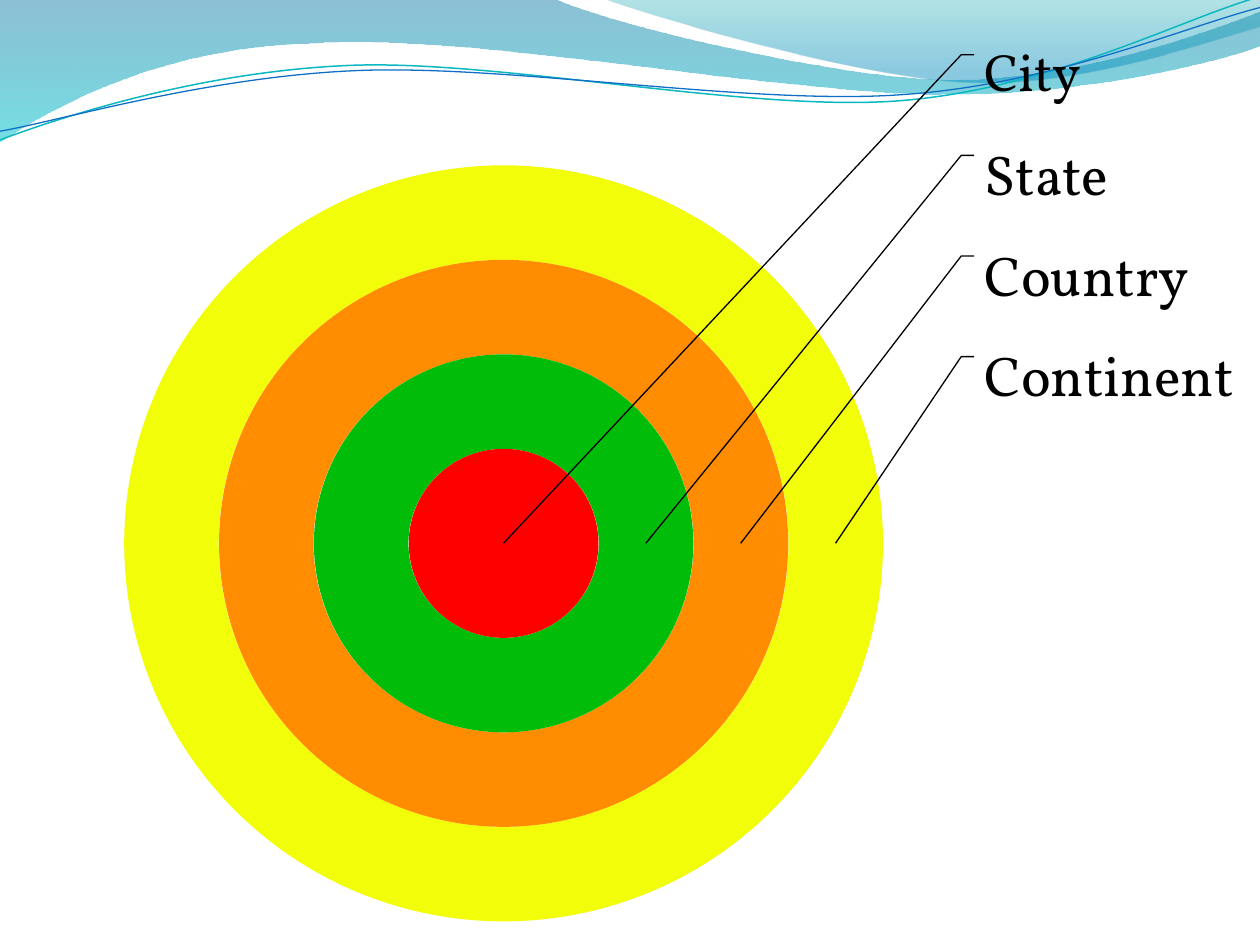
from dataclasses import dataclass
from itertools import chain

from lxml.etree import SubElement
from pptx import Presentation
from pptx.dml.color import RGBColor as RGB
from pptx.enum.shapes import MSO_SHAPE as SHAPE
from pptx.enum.text import MSO_ANCHOR as ANCHOR, PP_ALIGN as ALIGN
from pptx.oxml.ns import qn
from pptx.util import Pt


@dataclass(frozen=True)
class Theme:
    font: str = "Vollkorn"
    city_size: int = 30
    label_size: int = 32
    ink: str = "000000"
    city: str = "FF0000"
    state: str = "01BD0A"
    country: str = "FF8C01"
    continent: str = "F1FD09"
    teal_line: str = "0AB8BF"
    blue_line: str = "0F6FC6"
    # Gradient stops: position, colour, opacity in percent
    wide_wave: tuple = ((0, "0074A1", 45), (1, "00C6CF", 55))
    corner_wave: tuple = ((0, "00A1A9", 30), (0.8, "008BBF", 45))


THEME = Theme()
CENTER_X, CENTER_Y = 287.8, 310.5
RING_W, RING_H = 54.2, 54
LABEL_X, LABEL_Y, LABEL_W, LABEL_H = 562.6, 22.3, 86.4, 57.5
WAVE_LINE_TILT = 357.3

# An outline is a start point, then segments of one point (line) or three (curve).
WIDE_WAVE = [
    [(0, 0)], [(316.8, -0.7)],
    [(342.7, 12.2), (478.1, 45.4), (545.8, 45.4)],
    [(614.2, 45.4), (689.8, 18.7), (720, 6.5)],
    [(720.7, 25.9)],
    [(707.8, 31.7), (626.4, 54.7), (537.1, 54)],
    [(447.8, 54), (275, 20.2), (185, 24.5)],
    [(92.9, 25.9), (33.1, 59.8), (-0.7, 81.4)],
]
CORNER_WAVE = [
    [(344.9, -0.7)],
    [(366.5, 7.9), (491, 44.6), (553.7, 46.8)],
    [(616.3, 49.7), (691.9, 23), (720, 15.1)],
    [(720, 0)],
]
TEAL_LINE = [
    [(-1.4, 63)],
    [(33.8, 51.7), (114.1, 29.4), (199.8, 29.9)],
    [(284.8, 30.3), (425.8, 67.3), (512.4, 64.9)],
    [(599, 62.4), (676.5, 25.7), (720.2, 15.5)],
]
BLUE_LINE = [
    [(-1.1, 58)],
    [(32.9, 53.8), (118.3, 32.5), (204.1, 33)],
    [(290.6, 33.4), (428.9, 63.8), (515.5, 61.4)],
    [(601.3, 59.6), (678.5, 30.1), (721.4, 21.3)],
]


def add_freeform(slide, outline, close):
    """Draw the outline by its points, then join each three into a curve."""
    first, *rest = [(Pt(x), Pt(y)) for x, y in chain(*outline)]
    builder = slide.shapes.build_freeform(*first)
    builder.add_line_segments(rest, close=close)
    sp = builder.convert_to_shape()
    sp.shadow.inherit = False
    lines = iter(list(sp._element.iter(qn("a:lnTo"))))
    for segment in outline[1:]:
        parts = [next(lines) for _ in segment]
        if len(parts) == 3:
            curve = parts[0].makeelement(qn("a:cubicBezTo"))
            parts[0].addprevious(curve)
            for part in parts:
                curve.append(part[0])
                part.getparent().remove(part)
    return sp


def add_wave(slide, outline, stops):
    sp = add_freeform(slide, outline, close=True)
    sp.line.fill.background()
    sp.fill.gradient()
    sp.fill.gradient_angle = 270
    for stop, (position, color, _) in zip(sp.fill.gradient_stops, stops):
        stop.position = position
        stop.color.rgb = RGB.from_string(color)
    for clr, (_, _, opacity) in zip(sp._element.iter(qn("a:srgbClr")), stops):
        SubElement(clr, qn("a:alpha"), val=str(opacity * 1000))


def set_line(sp, color, width):
    sp.fill.background()
    sp.line.color.rgb = RGB.from_string(color)
    sp.line.width = Pt(width)


def add_wave_line(slide, outline, color, width):
    sp = add_freeform(slide, outline, close=False)
    sp.rotation = WAVE_LINE_TILT
    set_line(sp, color, width)


def add_ring(slide, level, color):
    """Add the disc (level 1) or the ring that reaches out to the level."""
    w, h = RING_W * level, RING_H * level
    kind = SHAPE.OVAL if level == 1 else SHAPE.DONUT
    sp = slide.shapes.add_shape(kind, Pt(CENTER_X - w), Pt(CENTER_Y - h),
                                Pt(2 * w), Pt(2 * h))
    if level > 1:
        sp.adjustments[0] = 0.5 / level
    sp.shadow.inherit = False
    sp.fill.solid()
    sp.fill.fore_color.rgb = RGB.from_string(color)
    sp.line.fill.background()


def add_label(slide, level, text, size):
    """Add a callout whose leader ends in the middle of the level's ring."""
    top = LABEL_Y + LABEL_H * (level - 1)
    target_x = CENTER_X if level == 1 else CENTER_X + RING_W * (level - 0.5)
    sp = slide.shapes.add_shape(SHAPE.LINE_CALLOUT_2_NO_BORDER, Pt(LABEL_X),
                                Pt(top), Pt(LABEL_W), Pt(LABEL_H))
    leader = (0.157, -0.069, 0.157, -0.154,
              (CENTER_Y - top) / LABEL_H, (target_x - LABEL_X) / LABEL_W)
    for i, value in enumerate(leader):
        sp.adjustments[i] = value
    sp.shadow.inherit = False
    set_line(sp, THEME.ink, 0.75)
    tf = sp.text_frame
    tf.margin_left = tf.margin_right = tf.margin_top = tf.margin_bottom = 0
    tf.word_wrap = False
    tf.vertical_anchor = ANCHOR.TOP
    p = tf.paragraphs[0]
    p.alignment = ALIGN.LEFT
    r = p.add_run()
    r.text = text
    r.font.name = THEME.font
    r.font.size = Pt(size)
    r.font.color.rgb = RGB.from_string(THEME.ink)


def main():
    prs = Presentation()
    prs.slide_width, prs.slide_height = Pt(720), Pt(540)
    slide = prs.slides.add_slide(prs.slide_layouts[6])

    add_wave(slide, WIDE_WAVE, THEME.wide_wave)
    add_wave(slide, CORNER_WAVE, THEME.corner_wave)
    add_wave_line(slide, TEAL_LINE, THEME.teal_line, 0.85)
    add_wave_line(slide, BLUE_LINE, THEME.blue_line, 0.75)

    for level, text, color, size in (
        (4, "Continent", THEME.continent, THEME.label_size),
        (3, "Country", THEME.country, THEME.label_size),
        (2, "State", THEME.state, THEME.label_size),
        (1, "City", THEME.city, THEME.city_size),
    ):
        add_ring(slide, level, color)
        add_label(slide, level, text, size)

    prs.save("out.pptx")


if __name__ == "__main__":
    main()
